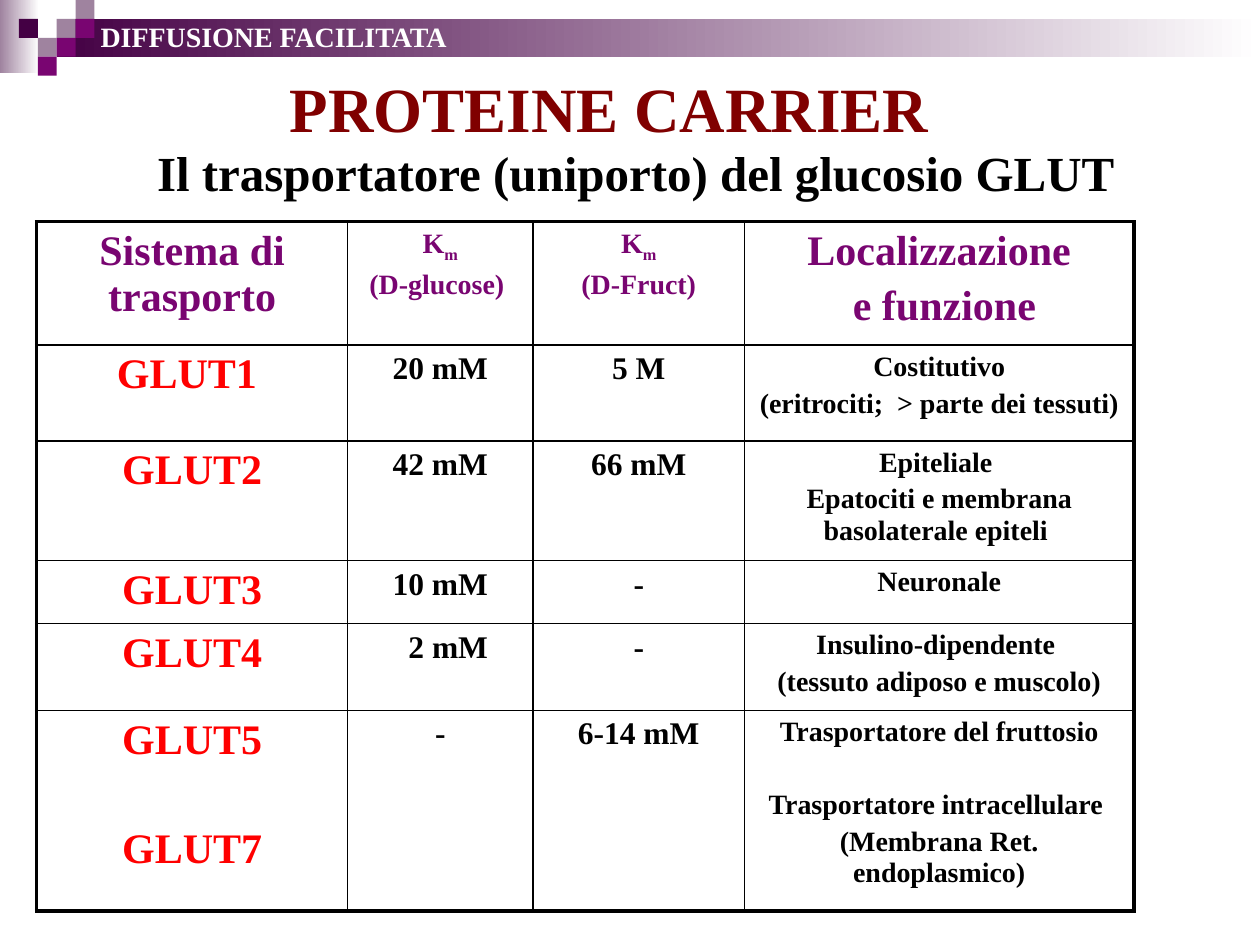
from lxml import etree
from pptx import Presentation
from pptx.dml.color import RGBColor
from pptx.enum import shapes, text
from pptx.oxml import ns
from pptx.util import Inches, Pt

FONT = "Times New Roman"
HUES = {"dark": "440044", "plum": "790571", "mauve": "9F839F", "white": "FFFFFF",
        "black": "000000", "maroon": "800000", "red": "FF0000"}
COLS = [2.47, 1.47, 1.68, 3.09]
ROWS = [0.98, 0.76, 0.95, 0.5, 0.69, 1.59]
HEAD = [["Sistema di trasporto"], ["Km", "(D-glucose) "], ["Km", "(D-Fruct)"],
        ["Localizzazione", " e funzione"]]
BODY = [
    [["GLUT1 "], ["20 mM"], ["5 M"],
     ["Costitutivo", "(eritrociti;  > parte dei tessuti)"]],
    [["GLUT2"], ["42 mM"], ["66 mM"],
     ["Epiteliale ", "Epatociti e membrana basolaterale epiteli "]],
    [["GLUT3"], ["10 mM"], ["-"], ["Neuronale"]],
    [["GLUT4"], ["2 mM"], ["-"],
     ["Insulino-dipendente ", "(tessuto adiposo e muscolo)"]],
    [["GLUT5", "GLUT7"], ["-"], ["6-14 mM"],
     ["Trasportatore del fruttosio", "Trasportatore intracellulare ",
      "(Membrana Ret. endoplasmico)"]],
]
WIDE = {"GLUT7", "Trasportatore intracellulare "}


def tint(hue):
    """Return the named colour."""
    return RGBColor.from_string(HUES[hue])


def style(para, size, hue):
    """Format every run of a paragraph."""
    for run in para.runs:
        font = run.font
        font.name, font.size, font.bold = FONT, Pt(size), True
        font.color.rgb = tint(hue)


def block(slide, box, *hues):
    """Add a rectangle with a plain fill or a fade between two colours."""
    rect = slide.shapes.add_shape(shapes.MSO_SHAPE.RECTANGLE, *map(Inches, box))
    rect.shadow.inherit = False
    rect.line.fill.background()
    if len(hues) == 1:
        rect.fill.solid()
        rect.fill.fore_color.rgb = tint(hues[0])
        return
    rect.fill.gradient()
    rect.fill.gradient_angle = 0
    for stop, hue in zip(rect.fill.gradient_stops, hues):
        stop.color.rgb = tint(hue)


def banner(slide, box):
    """Draw the fading bar and its mosaic of squares."""
    left, top, width, height = box
    unit = 0.15
    block(slide, (left, top, 0.31, 0.58), "mauve", "white")
    block(slide, (left + 3 * unit, top + unit, width - 3 * unit, 2 * unit), "dark", "white")
    tiles = [(3, 1, "mauve"), (4, 0, "mauve"), (4, 1, "plum"), (2, 2, "mauve"),
             (1, 1, "dark"), (3, 2, "plum"), (2, 3, "plum")]
    for col, row, hue in tiles:
        block(slide, (left + col * unit, top + row * unit, unit, unit), hue)


def label(slide, box, words, size, hue, align, wrap=False):
    """Add a one-line text box."""
    frame = slide.shapes.add_textbox(*map(Inches, box)).text_frame
    frame.word_wrap = wrap
    frame.text = words
    para = frame.paragraphs[0]
    para.alignment = align
    style(para, size, hue)


def edge(cell, widths):
    """Set the left, right, top and bottom borders of a cell."""
    props = cell._tc.get_or_add_tcPr()
    for spot, (side, width) in enumerate(zip("LRTB", widths)):
        line = etree.Element(ns.qn("a:ln" + side), w=str(Pt(width)))
        fill = etree.SubElement(line, ns.qn("a:solidFill"))
        etree.SubElement(fill, ns.qn("a:srgbClr"), val=HUES["black"])
        props.insert(spot, line)


def write(cell, lines, size, hue):
    """Fill a cell with centred paragraphs."""
    frame = cell.text_frame
    for spot, line in enumerate(lines):
        para = frame.add_paragraph() if spot else frame.paragraphs[0]
        para.alignment = text.PP_ALIGN.CENTER
        para.space_before = Pt(size * (1.5 if line in WIDE else 0.2))
        para.text = line
        if line == "Km":
            para.text = "K"
            sub = para.add_run()
            sub.text = "m"
            sub._r.get_or_add_rPr().set("baseline", "-25000")
        if line == "2 mM":
            para._p.get_or_add_pPr().set("marL", str(Pt(9)))
        style(para, size, hue)


def grid(slide, box):
    """Build the table of glucose carriers."""
    table = slide.shapes.add_table(len(ROWS), len(COLS), *map(Inches, box)).table
    table.first_row = table.horz_banding = False
    for col, width in zip(table.columns, COLS):
        col.width = Inches(width)
    for row, height in zip(table.rows, ROWS):
        row.height = Inches(height)
    top = list(zip((24, 16, 16, 24), ["plum"] * 4))
    rest = list(zip((24, 18, 18, 16), ["red"] + ["black"] * 3))
    for r, row in enumerate([HEAD] + BODY):
        for c, lines in enumerate(row):
            cell = table.cell(r, c)
            cell.fill.background()
            outer = (c == 0, c == len(COLS) - 1, r == 0, r == len(ROWS) - 1)
            edge(cell, [2.25 if side else 1 for side in outer])
            write(cell, lines, *(rest if r else top)[c])


def main():
    """Build and save the slide."""
    deck = Presentation()
    deck.slide_width, deck.slide_height = Inches(10), Inches(7.5)
    slide = deck.slides.add_slide(deck.slide_layouts[6])
    mid, left = text.PP_ALIGN.CENTER, text.PP_ALIGN.LEFT
    banner(slide, (0, 0, 10, 0.6))
    grid(slide, (0.29, 1.76, 8.71, 5.47))
    label(slide, (0.92, 1.08, 8.25, 0.57),
          "Il trasportatore (uniporto) del glucosio GLUT", 28, "black", mid, True)
    label(slide, (1.25, 0.5, 7.17, 0.42), "PROTEINE CARRIER", 36, "maroon", mid)
    label(slide, (0.7, 0.11, 3.02, 0.37), "DIFFUSIONE FACILITATA", 16, "white", left)
    deck.save("out.pptx")


if __name__ == "__main__":
    main()
